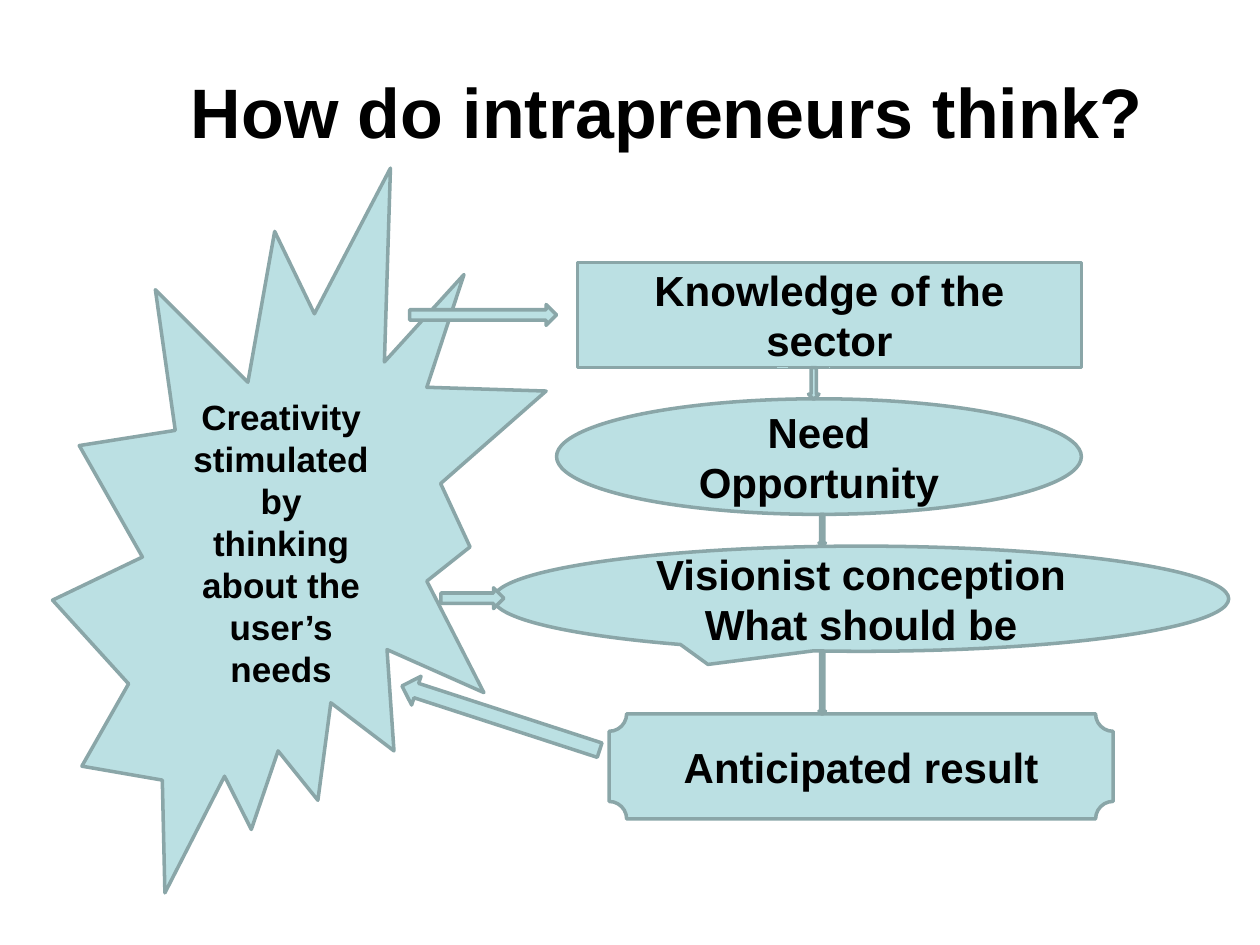
from pptx import Presentation
from pptx.dml.color import RGBColor
from pptx.enum.shapes import MSO_CONNECTOR, MSO_SHAPE
from pptx.enum.text import MSO_ANCHOR, PP_ALIGN
from pptx.oxml.ns import qn
from pptx.util import Cm, Pt
from lxml.etree import SubElement

AQUA = RGBColor(0xBB, 0xE0, 0xE3)
EDGE = RGBColor(0x8A, 0xA6, 0xA8)
PALE = RGBColor(0xB6, 0xDC, 0xDF)
BLACK = RGBColor(0, 0, 0)


def write(shape, text, size):
    frame = shape.text_frame
    frame.text = text
    frame.word_wrap = True
    frame.vertical_anchor = MSO_ANCHOR.MIDDLE
    for para in frame.paragraphs:
        para.alignment = PP_ALIGN.CENTER
        for run in para.runs:
            run.font.name = "Arial"
            run.font.size = Pt(size)
            run.font.bold = True
            run.font.color.rgb = BLACK


def draw(kind, left, top, width, height):
    shape = slide.shapes.add_shape(kind, Cm(left), Cm(top), Cm(width), Cm(height))
    shape.shadow.inherit = False
    shape.fill.solid()
    shape.fill.fore_color.rgb = AQUA
    shape.line.color.rgb = EDGE
    shape.line.width = Pt(2)
    return shape


deck = Presentation()
deck.slide_width = Cm(25.4)
deck.slide_height = Cm(19.05)
slide = deck.slides.add_slide(deck.slide_layouts[5])

title = slide.shapes.title
title.left, title.top = Cm(2.12), Cm(0.64)
title.width, title.height = Cm(22.65), Cm(3.17)
write(title, "How do intrapreneurs think?", 40)

steps = [
    (MSO_SHAPE.RECTANGLE, 11.64, 5.29, 10.16, 2.12, "Knowledge of the sector", 24),
    (MSO_SHAPE.OVAL, 11.22, 8.04, 10.58, 2.33, "Need\nOpportunity", 24),
    (MSO_SHAPE.OVAL_CALLOUT, 9.95, 11.01, 14.82, 2.12,
     "Visionist conception\nWhat should be", 24),
    (MSO_SHAPE.PLAQUE, 12.28, 14.39, 10.16, 2.12, "Anticipated result", 24),
    (MSO_SHAPE.EXPLOSION2, 1.06, 3.39, 9.95, 14.61,
     "Creativity stimulated by thinking about the user’s needs", 20),
]
boxes = []
for kind, left, top, width, height, text, size in steps:
    box = draw(kind, left, top, width, height)
    write(box, text, size)
    boxes.append(box)

ticks = []
for start, end in [(16.74, 16.72), (15.66, 15.88)]:
    tick = slide.shapes.add_connector(
        MSO_CONNECTOR.STRAIGHT, Cm(start), Cm(7.41), Cm(end), Cm(7.41))
    tick.line.color.rgb = PALE
    tick.line.width = Pt(0.75)
    SubElement(tick._element.spPr, qn("a:effectLst"))
    ticks.append(tick)
ticks[0].end_connect(boxes[0], 2)

arrows = [
    (MSO_SHAPE.DOWN_ARROW, 16.3, 7.41, 0.21, 0.64, 0),
    (MSO_SHAPE.DOWN_ARROW, 16.51, 10.37, 0.13, 0.64, 0),
    (MSO_SHAPE.DOWN_ARROW, 16.51, 13.13, 0.13, 1.27, 0),
    (MSO_SHAPE.RIGHT_ARROW, 8.89, 11.85, 1.27, 0.42, 0),
    (MSO_SHAPE.LEFT_ARROW, 8, 14.17, 4.19, 0.61, 18),
    (MSO_SHAPE.RIGHT_ARROW, 8.26, 6.14, 2.96, 0.42, 0),
]
for kind, left, top, width, height, turn in arrows:
    draw(kind, left, top, width, height).rotation = turn

deck.save("out.pptx")
